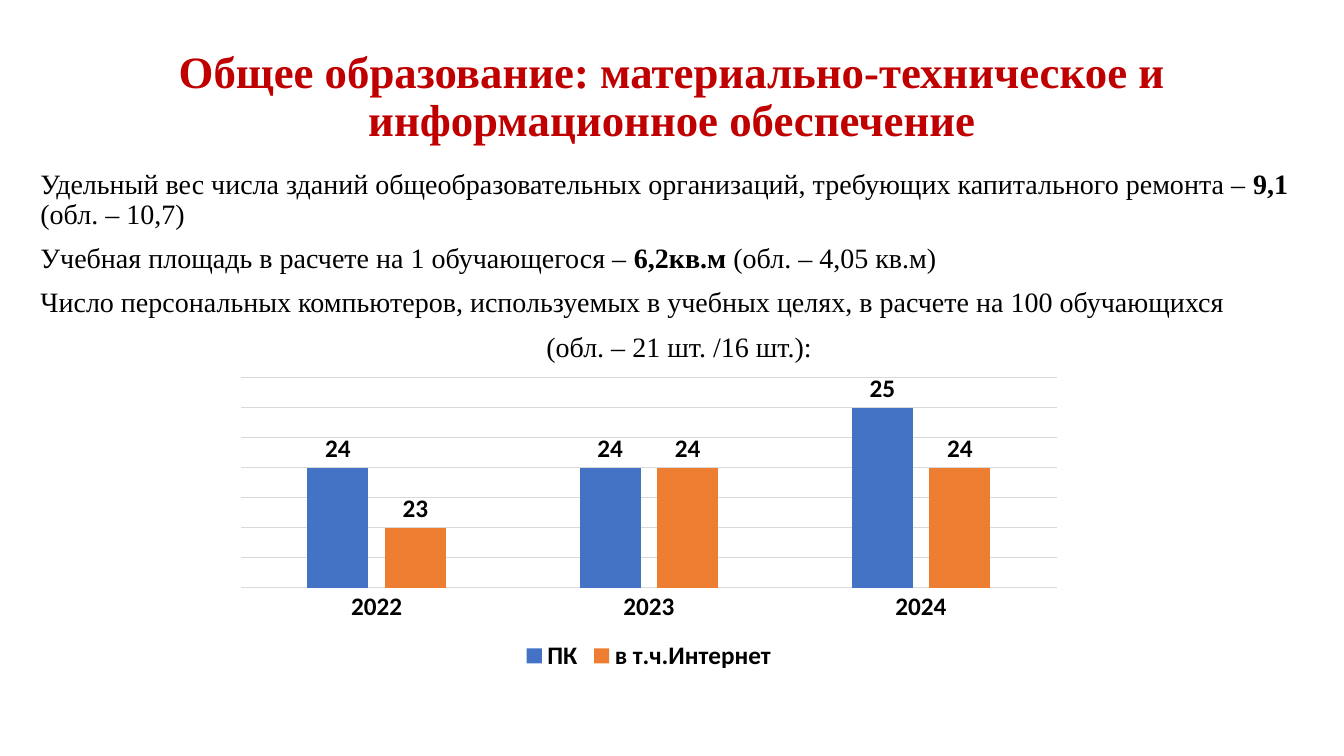
from dataclasses import dataclass

from pptx import Presentation
from pptx.chart.data import CategoryChartData
from pptx.dml.color import RGBColor
from pptx.enum.chart import XL_CHART_TYPE, XL_LABEL_POSITION, XL_LEGEND_POSITION, XL_TICK_MARK
from pptx.enum.text import MSO_ANCHOR, PP_ALIGN
from pptx.util import Emu, Pt

PX = 9525


@dataclass(frozen=True)
class Theme:
    text_font: str = "Times New Roman"
    chart_font: str = "Calibri"
    heading: RGBColor = RGBColor(0xC0, 0x00, 0x00)
    ink: RGBColor = RGBColor(0x00, 0x00, 0x00)
    grid: RGBColor = RGBColor(0xD9, 0xD9, 0xD9)
    series: tuple = (RGBColor(0x44, 0x72, 0xC4), RGBColor(0xED, 0x7D, 0x31))
    heading_size: int = 32
    body_size: int = 20
    chart_size: int = 18
    grid_width: float = 0.75


THEME = Theme()

HEADING = "Общее образование: материально-техническое и информационное обеспечение"
INDICATORS = [
    (PP_ALIGN.LEFT, [
        ("Удельный вес числа зданий общеобразовательных организаций, требующих капитального ремонта – ", False),
        ("9,1 ", True),
        ("(обл. – 10,7)", False),
    ]),
    (PP_ALIGN.LEFT, [
        ("Учебная площадь в расчете на 1 обучающегося – ", False),
        ("6,2кв.м ", True),
        ("(обл. – 4,05 кв.м)", False),
    ]),
    (PP_ALIGN.LEFT, [
        ("Число персональных компьютеров, используемых в учебных целях, в расчете на 100 обучающихся", False),
    ]),
    (PP_ALIGN.CENTER, [(" (обл. – 21 шт. /16 шт.):", False)]),
]
YEARS = ["2022", "2023", "2024"]
COMPUTERS = {"ПК": (24, 24, 25), "в т.ч.Интернет": (23, 24, 24)}


def to_emu(box):
    return [Emu(length * PX) for length in box]


def style_font(font, name, size, color, bold=None):
    font.name = name
    font.size = Pt(size)
    font.color.rgb = color
    if bold is not None:
        font.bold = bold


def style_chart_font(font):
    style_font(font, THEME.chart_font, THEME.chart_size, THEME.ink, True)


def style_grid_line(line):
    line.color.rgb = THEME.grid
    line.width = Pt(THEME.grid_width)


def add_heading(slide, box):
    frame = slide.shapes.add_textbox(*to_emu(box)).text_frame
    frame.word_wrap = True
    frame.vertical_anchor = MSO_ANCHOR.MIDDLE
    heading = frame.paragraphs[0]
    heading.text = HEADING
    heading.alignment = PP_ALIGN.CENTER
    heading.line_spacing = 0.9
    style_font(heading.font, THEME.text_font, THEME.heading_size, THEME.heading, True)


def add_indicators(slide, box):
    frame = slide.shapes.add_textbox(*to_emu(box)).text_frame
    frame.word_wrap = True
    for index, (alignment, phrases) in enumerate(INDICATORS):
        indicator = frame.add_paragraph() if index else frame.paragraphs[0]
        indicator.alignment = alignment
        indicator.line_spacing = 0.9
        indicator.space_before = Pt(10)
        style_font(indicator.font, THEME.text_font, THEME.body_size, THEME.ink)
        for wording, bold in phrases:
            phrase = indicator.add_run()
            phrase.text = wording
            if bold:
                phrase.font.bold = True


def add_computers_chart(slide, box):
    computers = CategoryChartData(number_format="0")
    computers.categories = YEARS
    for name, counts in COMPUTERS.items():
        computers.add_series(name, counts)
    chart = slide.shapes.add_chart(XL_CHART_TYPE.COLUMN_CLUSTERED, *to_emu(box), computers).chart
    style_chart_font(chart.font)
    chart.has_title = False
    chart.has_legend = True
    chart.legend.position = XL_LEGEND_POSITION.BOTTOM
    chart.legend.include_in_layout = False
    style_chart_font(chart.legend.font)

    years = chart.category_axis
    years.major_tick_mark = XL_TICK_MARK.NONE
    style_chart_font(years.tick_labels.font)
    style_grid_line(years.format.line)

    counts_axis = chart.value_axis
    counts_axis.visible = False
    counts_axis.minimum_scale = 22
    counts_axis.maximum_scale = 25.5
    counts_axis.major_unit = 0.5
    counts_axis.has_major_gridlines = True
    style_grid_line(counts_axis.major_gridlines.format.line)

    columns = chart.plots[0]
    columns.gap_width = 219
    columns.overlap = -27
    columns.vary_by_categories = False
    for series, color in zip(columns.series, THEME.series):
        series.format.fill.solid()
        series.format.fill.fore_color.rgb = color
        labels = series.data_labels
        labels.show_value = True
        labels.position = XL_LABEL_POSITION.OUTSIDE_END
        style_chart_font(labels.font)


def main():
    presentation = Presentation()
    presentation.slide_width, presentation.slide_height = to_emu((1280, 720))
    slide = presentation.slides.add_slide(presentation.slide_layouts[6])
    add_indicators(slide, (29, 157, 1229, 509))
    add_heading(slide, (88, 24, 1104, 139))
    add_computers_chart(slide, (213, 354, 810, 290))
    presentation.save("out.pptx")


if __name__ == "__main__":
    main()
